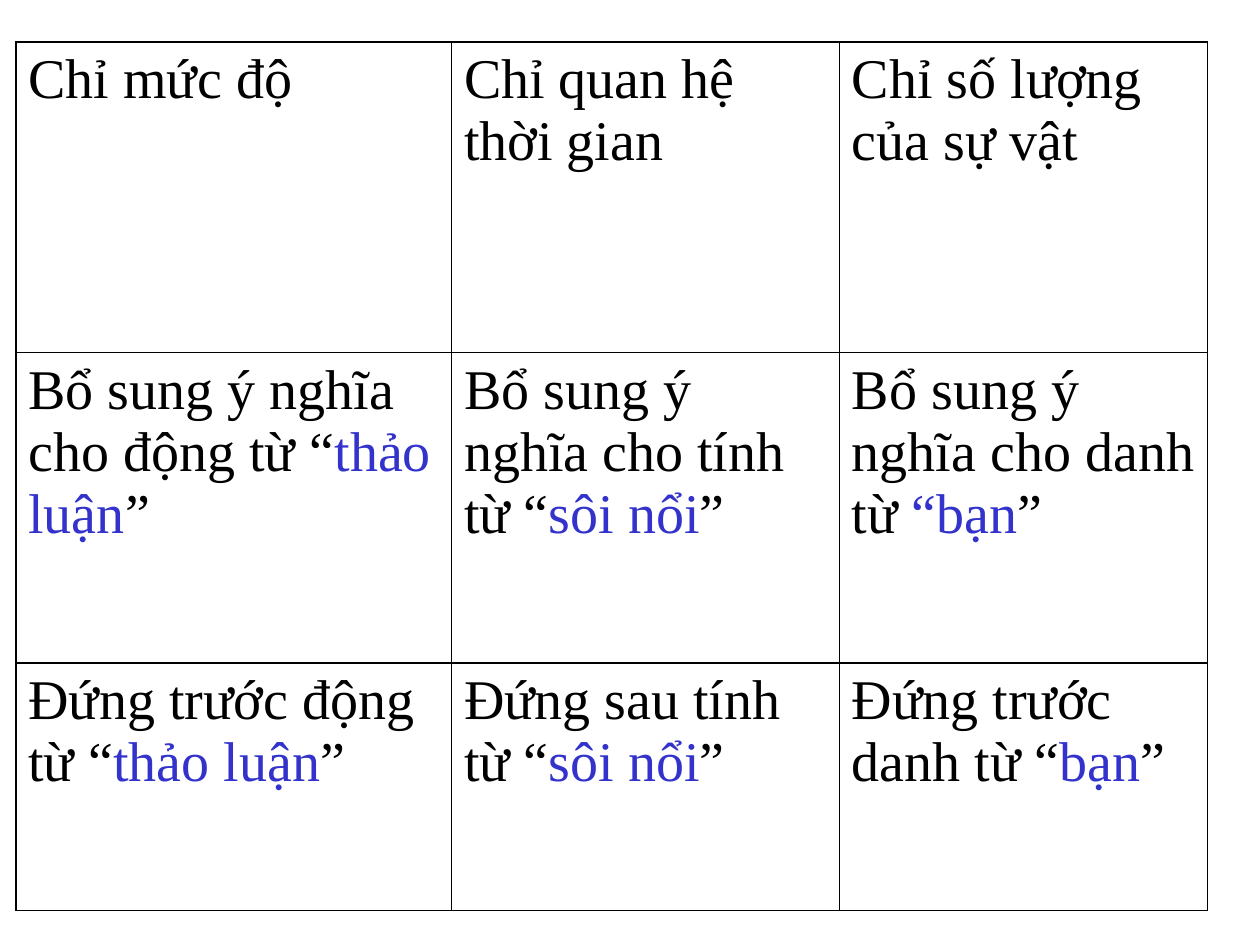
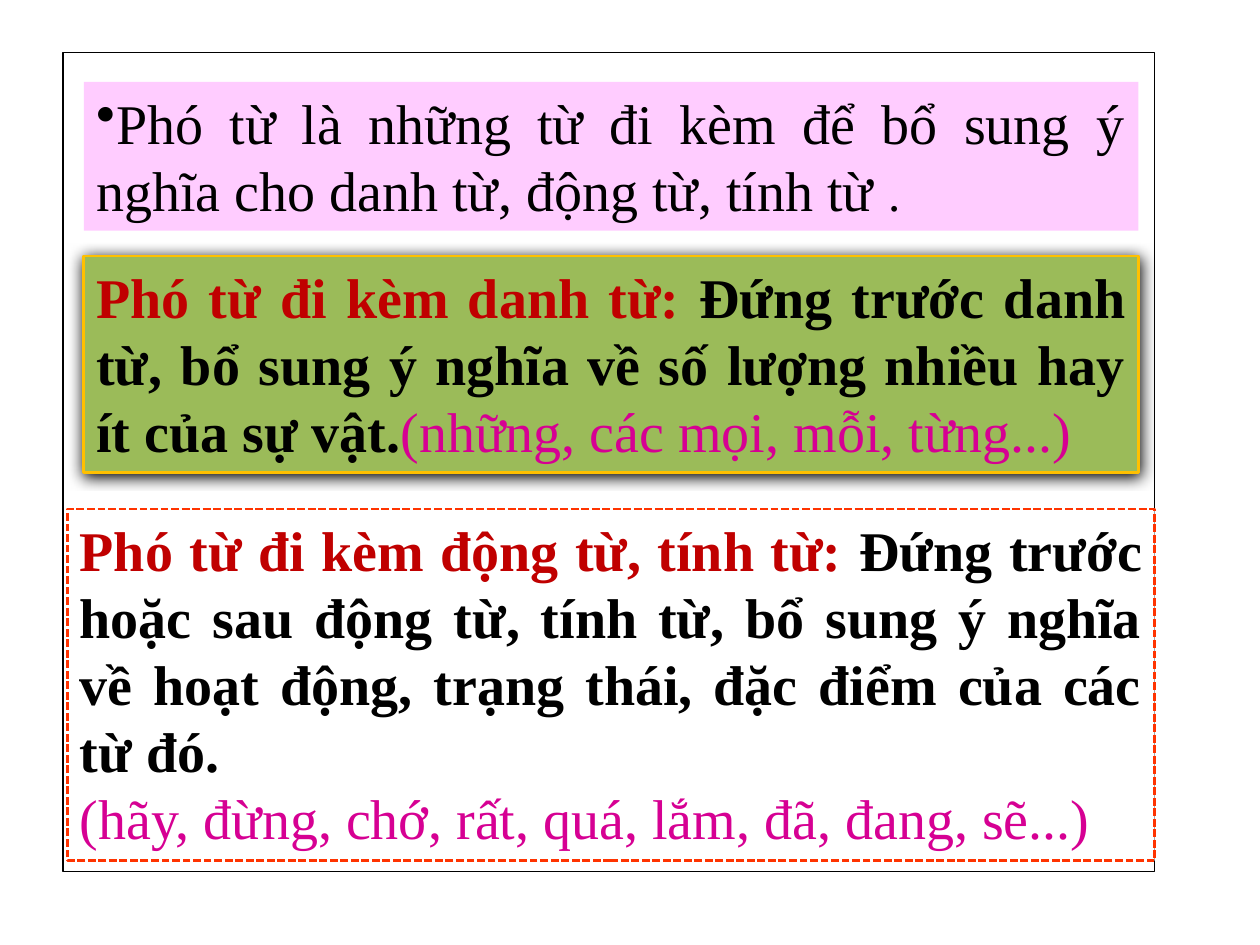
"""Two slides on Vietnamese adverbs: a comparison table and a boxed summary."""
from lxml import etree
from pptx import Presentation
from pptx import util as u
from pptx.dml.color import RGBColor
from pptx.enum import dml, shapes, text
from pptx.oxml.ns import qn

FONT = "Times New Roman"
BLACK = RGBColor(0x00, 0x00, 0x00)
WHITE = RGBColor(0xFF, 0xFF, 0xFF)
BLUE = RGBColor(0x33, 0x33, 0xCC)
RED = RGBColor(0xC0, 0x00, 0x00)
MAGENTA = RGBColor(0xD6, 0x00, 0x93)
PINK = RGBColor(0xFF, 0xCC, 0xFF)
GREEN = RGBColor(0x9B, 0xBB, 0x59)
GOLD = RGBColor(0xFF, 0xC0, 0x00)
ORANGE = RGBColor(0xFF, 0x33, 0x00)


def add_span(para, words, color=BLACK, bold=False, size=32):
    span = para.add_run()
    span.text = words
    span.font.name = FONT
    span.font.size = u.Pt(size)
    span.font.bold = bold
    span.font.color.rgb = color


def add_box(page, left, top, width, height, fill=None, line=None, weight=1.5):
    box = page.shapes.add_shape(shapes.MSO_SHAPE.RECTANGLE, u.Cm(left), u.Cm(top), u.Cm(width), u.Cm(height))
    box.shadow.inherit = False
    if fill is None:
        box.fill.background()
    else:
        box.fill.solid()
        box.fill.fore_color.rgb = fill
    if line is None:
        box.line.fill.background()
    else:
        box.line.color.rgb = line
        box.line.width = u.Pt(weight)
    box.text_frame.word_wrap = True
    box.text_frame.vertical_anchor = text.MSO_ANCHOR.TOP
    return box


deck = Presentation()
deck.slide_width = u.Cm(25.4)
deck.slide_height = u.Cm(19.05)
blank = deck.slide_layouts[6]

page = deck.slides.add_slide(blank)
rows = [
    [("Chỉ mức độ",), ("Chỉ quan hệ thời gian",), ("Chỉ số lượng của sự vật",)],
    [("Bổ sung ý nghĩa cho động từ “", "thảo luận", "”"),
     ("Bổ sung ý nghĩa cho tính từ “", "sôi nổi", "”"),
     ("Bổ sung ý nghĩa cho danh từ ", "“bạn", "”")],
    [("Đứng trước động từ “", "thảo luận", "”"),
     ("Đứng sau tính từ “", "sôi nổi", "”"),
     ("Đứng trước danh từ “", "bạn", "”")],
]
widths = [8.78, 7.82, 7.42]
heights = [6.26, 6.26, 4.98]
table = page.shapes.add_table(3, 3, u.Cm(0.32), u.Cm(0.85), u.Cm(sum(widths)), u.Cm(sum(heights))).table
table.first_row = False
table.horz_banding = False
for column, width in zip(table.columns, widths):
    column.width = u.Cm(width)
for row, height, entries in zip(table.rows, heights, rows):
    row.height = u.Cm(height)
    for cell, entry in zip(row.cells, entries):
        para = cell.text_frame.paragraphs[0]
        for words, color in zip(entry, (BLACK, BLUE, BLACK)):
            add_span(para, words, color)
        properties = cell._tc.get_or_add_tcPr()
        for side in ("a:lnL", "a:lnR", "a:lnT", "a:lnB"):
            border = etree.SubElement(properties, qn(side), w=str(u.Pt(1)))
            paint = etree.SubElement(border, qn("a:solidFill"))
            etree.SubElement(paint, qn("a:srgbClr"), val=str(BLACK))
        cell.fill.solid()
        cell.fill.fore_color.rgb = WHITE

page = deck.slides.add_slide(blank)
add_box(page, 1.27, 1.06, 22.01, 16.51, line=BLACK, weight=0.75)
definition = add_box(page, 1.69, 1.65, 21.26, 3, fill=PINK)
noun_rule = add_box(page, 1.69, 5.16, 21.26, 4.37, fill=GREEN, line=GOLD)
verb_rule = add_box(page, 1.36, 10.26, 21.92, 7.09, fill=WHITE, line=ORANGE)
verb_rule.line.dash_style = dml.MSO_LINE.SQUARE_DOT

effects = noun_rule._element.spPr.find(qn("a:effectLst"))
shadow = etree.SubElement(effects, qn("a:outerShdw"), blurRad=str(u.Pt(8.5)), dist=str(u.Pt(1)),
                          dir="5400000", algn="ctr", rotWithShape="0")
etree.SubElement(shadow, qn("a:srgbClr"), val=str(BLACK))

summary = [
    (definition, [
        [("Phó từ là những từ đi kèm để bổ sung ý nghĩa cho danh từ, động từ, tính từ ",),
         (".", BLACK, False, 28)]]),
    (noun_rule, [
        [("Phó từ đi kèm danh từ: ", RED, True),
         ("Đứng trước danh từ, bổ sung ý nghĩa về số lượng nhiều hay ít của sự vật.", BLACK, True),
         ("(những, các mọi, mỗi, từng...)", MAGENTA)]]),
    (verb_rule, [
        [("Phó từ đi kèm động từ, tính từ: ", RED, True),
         ("Đứng trước hoặc sau động từ, tính từ, bổ sung ý nghĩa về hoạt động, "
          "trạng thái, đặc điểm của các từ đó.", BLACK, True)],
        [("(hãy, đừng, chớ, rất, quá, lắm, đã, đang, sẽ...)", MAGENTA)]]),
]
for box, paragraphs in summary:
    frame = box.text_frame
    for index, spans in enumerate(paragraphs):
        para = frame.add_paragraph() if index else frame.paragraphs[0]
        para.alignment = text.PP_ALIGN.JUSTIFY
        for span in spans:
            add_span(para, *span)

bullet = definition.text_frame.paragraphs[0]._p.get_or_add_pPr()
bullet.set("marL", "0")
bullet.set("indent", "0")
etree.SubElement(bullet, qn("a:buChar"), char="•")

deck.save("out.pptx")
